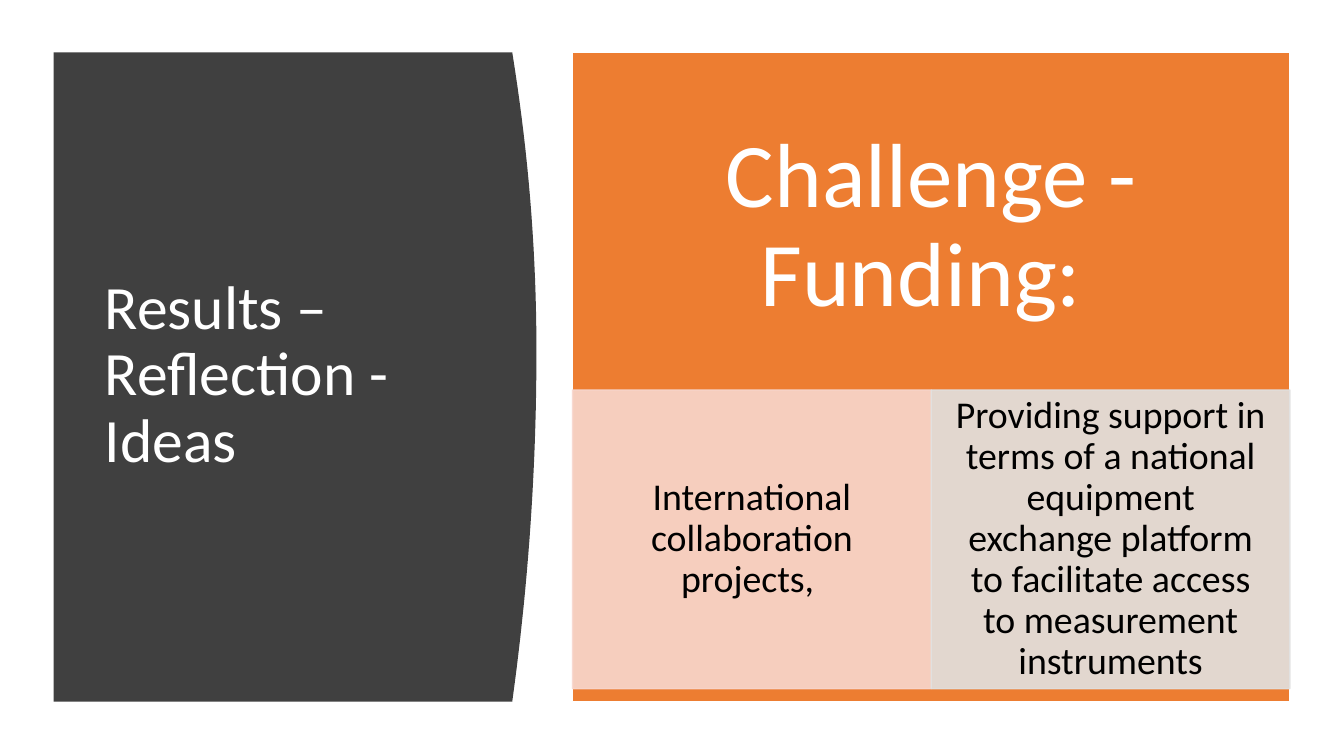
from lxml import etree
from pptx import Presentation
from pptx import util as u
from pptx.dml.color import RGBColor
from pptx.enum import shapes, text
from pptx.oxml.ns import qn

COLORS = {"dark": "404040", "white": "FFFFFF", "black": "000000",
          "orange": "ED7D31", "peach": "F8D7CE", "grey": "E1E1E1"}
FONT = "Calibri"


def rgb(name):
    return RGBColor.from_string(COLORS[name])


def set_alpha(fill, percent):
    for clr in fill.iter(qn("a:srgbClr")):
        etree.SubElement(clr, qn("a:alpha")).set("val", str(percent * 1000))


def write(sp, words, size, color, align, margins):
    tf = sp.text_frame
    tf.word_wrap = True
    tf.vertical_anchor = text.MSO_ANCHOR.MIDDLE
    side, edge = margins
    tf.margin_left = tf.margin_right = u.Cm(side)
    tf.margin_top = tf.margin_bottom = u.Cm(edge)
    p = tf.paragraphs[0]
    p.text = words
    p.alignment = align
    p.line_spacing = 0.9
    p.font.name = FONT
    p.font.size = u.Pt(size)
    p.font.color.rgb = rgb(color)


def add_text(slide, box, *style):
    write(slide.shapes.add_textbox(*map(u.Cm, box)), *style)


def add_rect(slide, box, fill, line):
    sp = slide.shapes.add_shape(shapes.MSO_SHAPE.RECTANGLE, *map(u.Cm, box))
    sp.shadow.inherit = False
    sp.fill.solid()
    sp.fill.fore_color.rgb = rgb(fill)
    sp.line.color.rgb = rgb(line)
    sp.line.width = u.Pt(1)
    return sp


def add_title_panel(slide, box, words):
    left, top, width, height = box
    bulge, peak, steps = 0.61, 0.46, 40
    points = []
    for i in range(steps + 1):
        t = i / steps
        reach = peak if t < peak else 1 - peak
        x = left + width - bulge * ((t - peak) / reach) ** 2
        points.append((u.Cm(x), u.Cm(top + height * t)))
    points.append((u.Cm(left), u.Cm(top + height)))
    builder = slide.shapes.build_freeform(u.Cm(left), u.Cm(top))
    builder.add_line_segments(points, close=True)
    sp = builder.convert_to_shape()
    sp.shadow.inherit = False
    sp.fill.solid()
    sp.fill.fore_color.rgb = rgb("dark")
    sp.line.fill.background()
    add_text(slide, (left + 1.04, top + 1.5, 9.5, height - 3.05), words,
             44, "white", text.PP_ALIGN.LEFT, (0.25, 0.13))


def add_challenge_panel(slide, box, heading, answers):
    left, top, width, height = box
    add_rect(slide, box, "orange", "white")
    add_text(slide, (left, top, width, height * 0.54), heading,
             65, "white", text.PP_ALIGN.CENTER, (1.3, 1.3))
    cell_width = width / len(answers)
    for i, (words, color) in enumerate(answers):
        cell = (left + i * cell_width, top + height * 0.52,
                cell_width, height * 0.46)
        sp = add_rect(slide, cell, color, color)
        set_alpha(sp.element.spPr, 90)
        write(sp, words, 27, "black", text.PP_ALIGN.CENTER, (0.53, 0.1))


def main():
    prs = Presentation()
    prs.slide_width, prs.slide_height = u.Cm(33.87), u.Cm(19.05)
    slide = prs.slides.add_slide(prs.slide_layouts[6])
    add_title_panel(slide, (1.35, 1.32, 12.17, 16.36),
                    "Results – Reflection - Ideas")
    add_challenge_panel(
        slide, (14.43, 1.32, 18.08, 16.36), "Challenge - Funding: ",
        [("International collaboration projects, ", "peach"),
         ("Providing support in terms of a national equipment exchange "
          "platform to facilitate access to measurement instruments", "grey")])
    prs.save("out.pptx")


if __name__ == "__main__":
    main()
